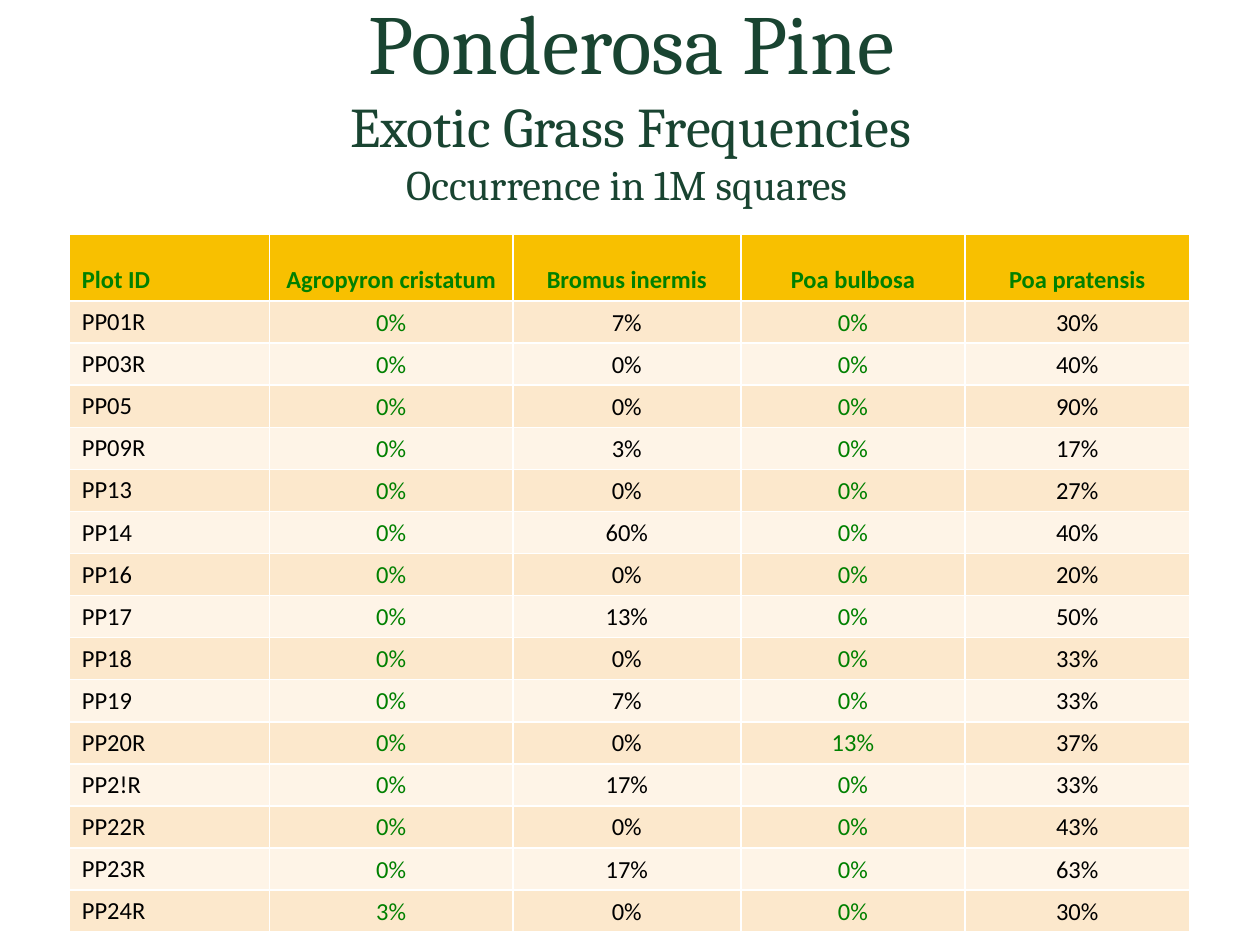
"""Build a slide with a table of exotic grass frequencies in ponderosa pine plots."""
from pptx import Presentation
from pptx.dml.color import RGBColor
from pptx.enum.text import MSO_ANCHOR as ANCHOR, PP_ALIGN as ALIGN
from pptx.util import Inches, Pt

TITLE = [("Ponderosa Pine", 48), ("Exotic Grass Frequencies", 32), ("Occurrence in 1M squares ", 24)]
HEADER = ["Plot ID", "Agropyron cristatum", "Bromus inermis", "Poa bulbosa", "Poa pratensis"]
PLOTS = [
    ("PP01R", 0, 7, 0, 30),
    ("PP03R", 0, 0, 0, 40),
    ("PP05", 0, 0, 0, 90),
    ("PP09R", 0, 3, 0, 17),
    ("PP13", 0, 0, 0, 27),
    ("PP14", 0, 60, 0, 40),
    ("PP16", 0, 0, 0, 20),
    ("PP17", 0, 13, 0, 50),
    ("PP18", 0, 0, 0, 33),
    ("PP19", 0, 7, 0, 33),
    ("PP20R", 0, 0, 13, 37),
    ("PP2!R", 0, 17, 0, 33),
    ("PP22R", 0, 0, 0, 43),
    ("PP23R", 0, 17, 0, 63),
    ("PP24R", 3, 0, 0, 30),
]
COL_WIDTHS = [1.59, 1.93, 1.81, 1.78, 1.78]
HEADER_HEIGHT, ROW_HEIGHT = 0.53, 0.31
DARK_GREEN, GREEN, BLACK = "194431", "008000", "000000"
GOLD, BANDS = "F8C000", ("FEF4E7", "FCE8CC")
COL_COLORS = [BLACK, GREEN, BLACK, GREEN, BLACK]


def rgb(value):
    return RGBColor.from_string(value)


def add_run(p, text, size, font, color, bold=False):
    r = p.add_run()
    r.text = text
    f = r.font
    f.size, f.name, f.bold = Pt(size), font, bold
    f.color.rgb = rgb(color)


def add_title(s):
    tf = s.shapes.add_textbox(Inches(0.23), Inches(0.21), Inches(9.56), Inches(1.55)).text_frame
    tf.word_wrap = True
    tf.vertical_anchor = ANCHOR.MIDDLE
    tf.margin_bottom = Inches(0.44)
    p = tf.paragraphs[0]
    p.alignment = ALIGN.CENTER
    for i, (text, size) in enumerate(TITLE):
        if i:
            p.add_line_break()
        add_run(p, text, size, "Cambria", DARK_GREEN)


def fill_cell(cell, row, col, value):
    is_header, is_value = row == 0, row > 0 and col > 0
    cell.fill.solid()
    cell.fill.fore_color.rgb = rgb(GOLD if is_header else BANDS[row % 2])
    if is_header:
        cell.vertical_anchor = ANCHOR.BOTTOM
    if is_value:
        cell.vertical_anchor = ANCHOR.MIDDLE
        cell.margin_left = cell.margin_top = cell.margin_right = Inches(0.01)
        cell.margin_bottom = 0
    p = cell.text_frame.paragraphs[0]
    p.alignment = ALIGN.CENTER if col else ALIGN.LEFT
    add_run(p, f"{value}%" if is_value else value, 14, "Calibri",
            GREEN if is_header else COL_COLORS[col], is_header)


def add_frequencies(s):
    rows = [HEADER, *PLOTS]
    heights = [HEADER_HEIGHT] + [ROW_HEIGHT] * len(PLOTS)
    table = s.shapes.add_table(len(rows), len(HEADER), Inches(0.55), Inches(1.86),
                               Inches(sum(COL_WIDTHS)), Inches(sum(heights))).table
    for column, width in zip(table.columns, COL_WIDTHS):
        column.width = Inches(width)
    for i, values in enumerate(rows):
        table.rows[i].height = Inches(heights[i])
        for j, value in enumerate(values):
            fill_cell(table.cell(i, j), i, j, value)


def main():
    prs = Presentation()
    prs.slide_width, prs.slide_height = Inches(10), Inches(7.5)
    s = prs.slides.add_slide(prs.slide_layouts[6])
    add_title(s)
    add_frequencies(s)
    prs.save("out.pptx")


if __name__ == "__main__":
    main()
